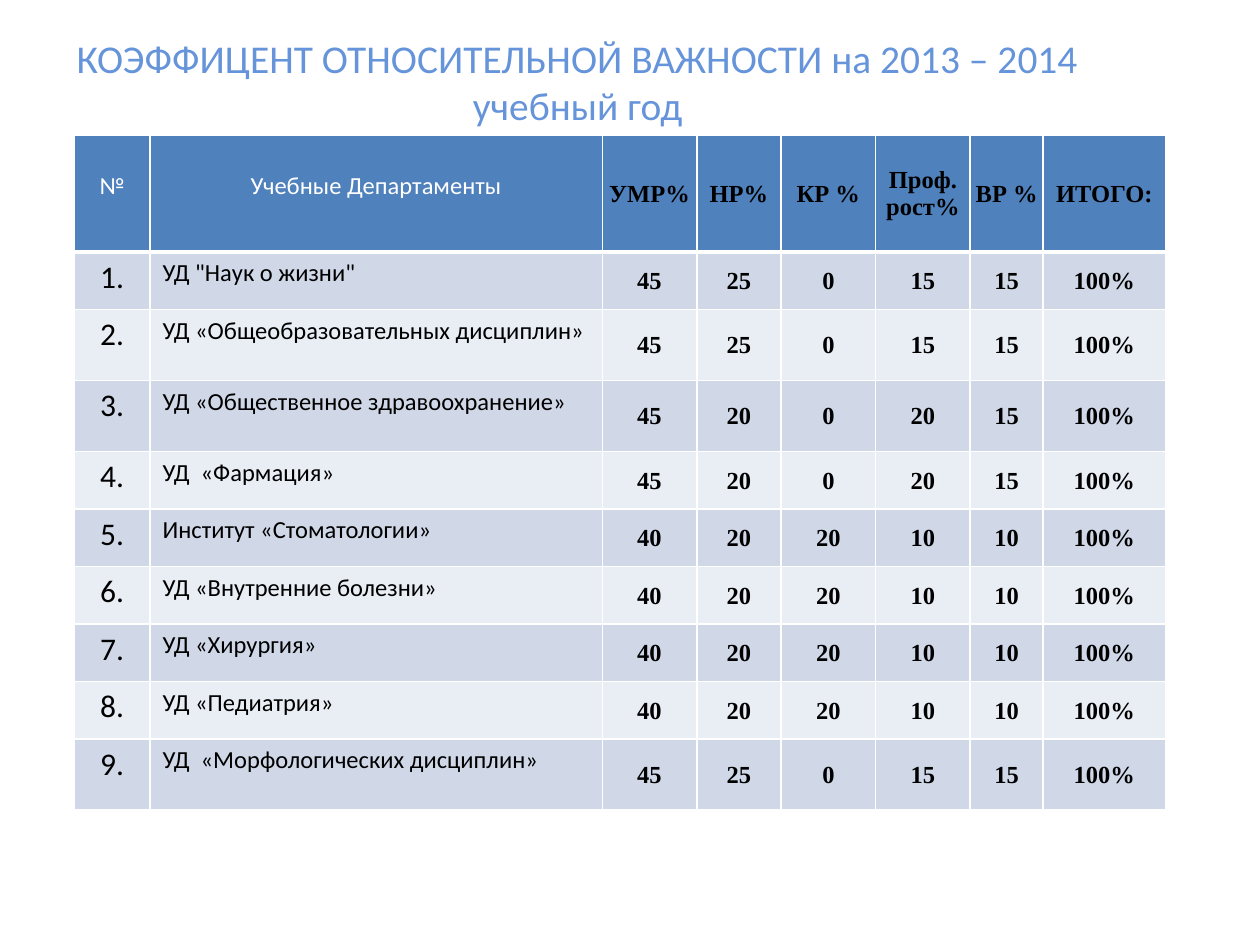
from lxml import etree
from pptx import Presentation
from pptx.dml.color import RGBColor
from pptx.enum.text import MSO_ANCHOR, PP_ALIGN
from pptx.oxml.ns import qn
from pptx.util import Inches, Pt

CENTER, LEFT = PP_ALIGN.CENTER, PP_ALIGN.LEFT
TOP, MIDDLE = MSO_ANCHOR.TOP, MSO_ANCHOR.MIDDLE

TITLE_BLUE = RGBColor(0x65, 0x94, 0xDA)
HEADER_BLUE = RGBColor(0x4F, 0x81, 0xBD)
BAND_DARK = RGBColor(0xD0, 0xD8, 0xE8)
BAND_LIGHT = RGBColor(0xE9, 0xED, 0xF4)
WHITE = RGBColor(0xFF, 0xFF, 0xFF)
BLACK = RGBColor(0x00, 0x00, 0x00)

TITLE = "КОЭФФИЦЕНТ ОТНОСИТЕЛЬНОЙ ВАЖНОСТИ на 2013 – 2014 учебный год"
HEADERS = ["№", "Учебные Департаменты", "УМР%", "НР%", "КР %",
           "Проф. рост%", "ВР %", "ИТОГО:"]
DEPARTMENTS = [
    ('УД "Наук о жизни"', 45, 25, 0, 15, 15),
    ("УД «Общеобразовательных дисциплин»", 45, 25, 0, 15, 15),
    ("УД «Общественное здравоохранение»", 45, 20, 0, 20, 15),
    ("УД  «Фармация»", 45, 20, 0, 20, 15),
    ("Институт «Стоматологии»", 40, 20, 20, 10, 10),
    ("УД «Внутренние болезни»", 40, 20, 20, 10, 10),
    ("УД «Хирургия»", 40, 20, 20, 10, 10),
    ("УД «Педиатрия»", 40, 20, 20, 10, 10),
    ("УД  «Морфологических дисциплин»", 45, 25, 0, 15, 15),
]
COLUMN_WIDTHS = [0.6, 3.59, 0.75, 0.67, 0.75, 0.75, 0.58, 0.97]
HEADER_HEIGHT, ROW_HEIGHT, TALL_ROW_HEIGHT = 0.93, 0.457, 0.563
TALL_ROWS = (2, 3, 9)


def write_text(frame, text, size=14, font="Calibri", color=BLACK, bold=False,
               align=CENTER):
    paragraph = frame.paragraphs[0]
    paragraph.alignment = align
    run = paragraph.add_run()
    run.text = text
    run.font.size = Pt(size)
    run.font.name = font
    run.font.bold = bold
    run.font.color.rgb = color


def set_borders(cell, bottom=1):
    properties = cell._tc.get_or_add_tcPr()
    for side, width in (("L", 1), ("R", 1), ("T", 1), ("B", bottom)):
        line = etree.SubElement(properties, qn(f"a:ln{side}"), w=str(Pt(width)))
        fill = etree.SubElement(line, qn("a:solidFill"))
        etree.SubElement(fill, qn("a:srgbClr"), val=str(WHITE))


def format_cell(cell, fill, bottom=1):
    set_borders(cell, bottom)
    cell.fill.solid()
    cell.fill.fore_color.rgb = fill


def write_value(cell, text):
    cell.vertical_anchor = MIDDLE
    cell.margin_left = cell.margin_right = cell.margin_top = Inches(0.01)
    cell.margin_bottom = 0
    write_text(cell.text_frame, text, font="Times New Roman", bold=True)


def fill_header(cells):
    for column, (cell, text) in enumerate(zip(cells, HEADERS)):
        format_cell(cell, HEADER_BLUE, bottom=3)
        if column < 2:
            cell.vertical_anchor = TOP
            cell.margin_top = Inches(0.29)
            write_text(cell.text_frame, text, color=WHITE)
        else:
            write_value(cell, text)


def fill_department(cells, number, department):
    name, *shares = department
    for cell in cells:
        format_cell(cell, BAND_DARK if number % 2 else BAND_LIGHT)
    write_text(cells[0].text_frame, f"{number}.", size=18)
    write_text(cells[1].text_frame, name, align=LEFT)
    for cell, share in zip(cells[2:], shares):
        write_value(cell, str(share))
    write_value(cells[-1], f"{sum(shares)}%")


def add_title(slide, left, top, width, height):
    title = slide.shapes.title
    title.left, title.top, title.width, title.height = left, top, width, height
    title.text_frame.vertical_anchor = MIDDLE
    write_text(title.text_frame, TITLE, size=22.5, color=TITLE_BLUE)


def add_weights_table(slide, left, top, width, height):
    table = slide.shapes.add_table(len(DEPARTMENTS) + 1, len(HEADERS),
                                   left, top, width, height).table
    for column, column_width in zip(table.columns, COLUMN_WIDTHS):
        column.width = Inches(column_width)
    header, *rows = table.rows
    header.height = Inches(HEADER_HEIGHT)
    fill_header(list(header.cells))
    for number, (row, department) in enumerate(zip(rows, DEPARTMENTS), 1):
        row.height = Inches(TALL_ROW_HEIGHT if number in TALL_ROWS else ROW_HEIGHT)
        fill_department(list(row.cells), number, department)


def main():
    presentation = Presentation()
    presentation.slide_width = Inches(10)
    presentation.slide_height = Inches(7.5)
    slide = presentation.slides.add_slide(presentation.slide_layouts[5])
    add_title(slide, Inches(0.5), Inches(0.3), Inches(8.17), Inches(0.69))
    add_weights_table(slide, Inches(0.59), Inches(1.07), Inches(8.66), Inches(5.35))
    presentation.save("out.pptx")


if __name__ == "__main__":
    main()
